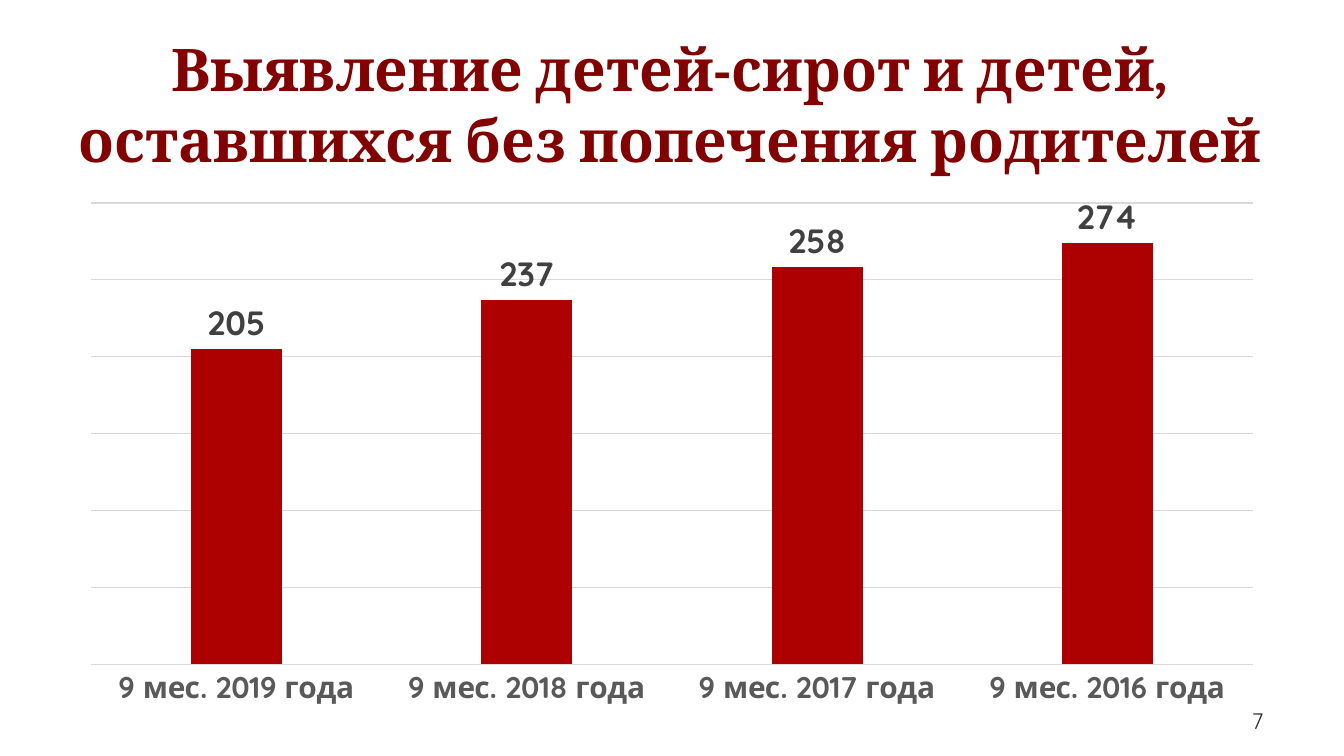
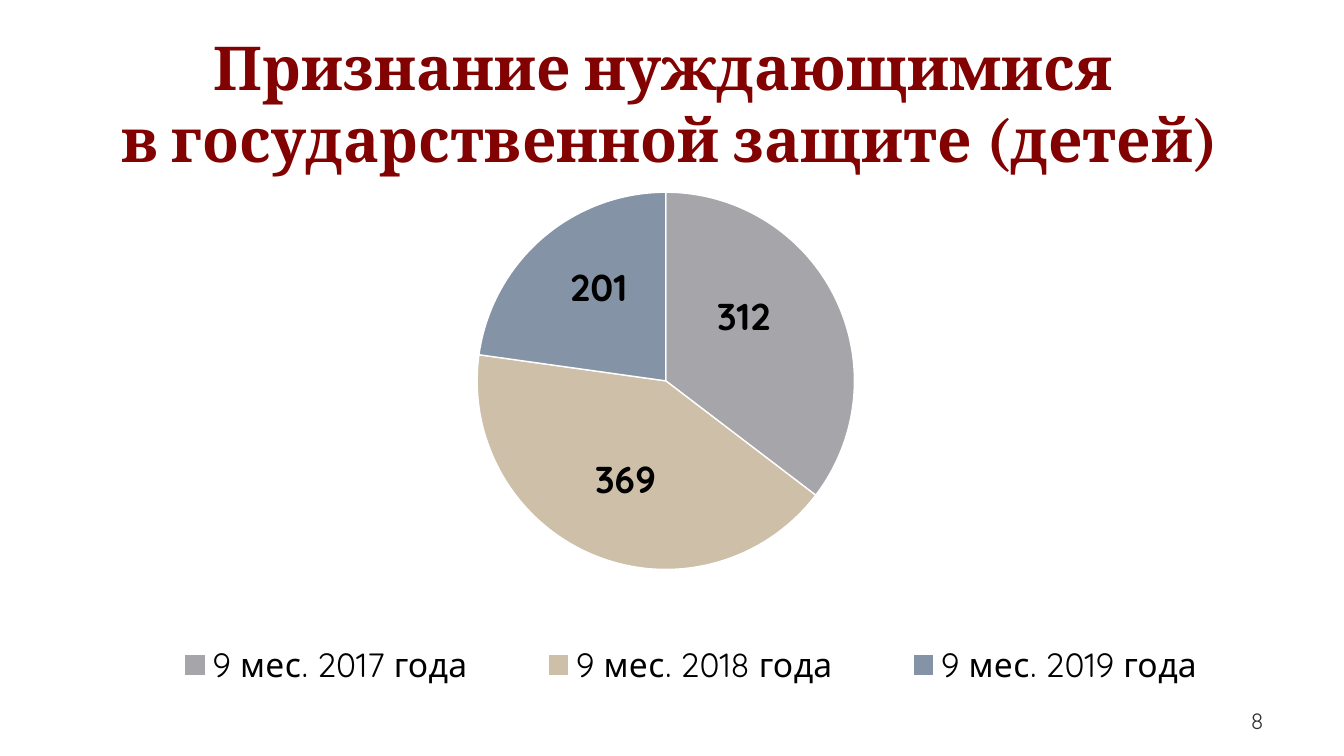
from dataclasses import dataclass

from lxml.etree import SubElement
from pptx import Presentation
from pptx.chart.chart import Chart
from pptx.chart.data import CategoryChartData
from pptx.dml.color import RGBColor
from pptx.enum.chart import (XL_CHART_TYPE, XL_LABEL_POSITION,
                             XL_LEGEND_POSITION, XL_TICK_LABEL_POSITION,
                             XL_TICK_MARK)
from pptx.enum.shapes import MSO_SHAPE
from pptx.enum.text import MSO_ANCHOR, MSO_AUTO_SIZE, PP_ALIGN
from pptx.oxml.ns import qn
from pptx.oxml.xmlchemy import BaseOxmlElement
from pptx.slide import Slide
from pptx.text.text import Font, TextFrame
from pptx.util import Inches, Pt

WIDTH, HEIGHT = Inches(10), Inches(5.625)
COL, ROW = WIDTH / 100, HEIGHT / 100
HEAD, BODY = "Cambria", "Quicksand"
COLORS = {
    "title": "820101", "bar": "AD0101", "grid": "D9D9D9", "axis": "595959",
    "label": "404040", "number": "303030", "black": "000000",
    "white": "FFFFFF", "gray": "A5A5AA", "sand": "CDBFA8", "steel": "8494A6",
}


@dataclass(frozen=True)
class Box:
    """An area in hundredths of the slide, or of a chart."""
    col: float
    row: float
    wide: float
    high: float

    def place(self) -> tuple[int, int, int, int]:
        return (round(self.col * COL), round(self.row * ROW),
                round(self.wide * COL), round(self.high * ROW))


@dataclass(frozen=True)
class Band:
    box: Box
    alpha: int = 100


@dataclass(frozen=True)
class Page:
    number: int
    lines: tuple[str, ...]
    size: float


@dataclass(frozen=True)
class Graph:
    kind: XL_CHART_TYPE
    area: Box
    plot: Box
    years: tuple[int, ...]
    values: tuple[int, ...]
    size: float


@dataclass(frozen=True)
class Slice:
    fill: str
    right: float  # label shift in hundredths of the chart
    down: float


BANDS = (Band(Box(3, 4.1, 94, 19.4), 83), Band(Box(4.1, 5.5, 91.7, 16.4)))
TITLE = Box(4.7, 6.05, 90.3, 15.1)
NUMBER = Box(71.7, 92.6, 23.3, 5.3)
LEGEND = Box(6, 89, 90, 9.4)
SLICES = (Slice("gray", -0.5, -4), Slice("sand", -0.3, 2.2),
          Slice("steel", -0.4, -4))
FOUND = Page(7, ("Выявление детей-сирот и детей, оставшихся без попечения родителей",), 31.5)
NEED = Page(8, ("Признание нуждающимися ", "в государственной защите (детей)"), 32.4)
BARS = Graph(XL_CHART_TYPE.COLUMN_CLUSTERED, Box(5, 25.6, 90, 69.2),
             Box(2, 1.8, 96, 88.2), (2019, 2018, 2017, 2016),
             (205, 237, 258, 274), 10)
PIE = Graph(XL_CHART_TYPE.PIE, Box(2.8, 19.2, 95.3, 73.4),
            Box(34.3, 8.5, 29.5, 68), (2017, 2018, 2019),
            (312, 369, 201), 18)


def color(name: str) -> RGBColor:
    return RGBColor.from_string(COLORS[name])


def style(font: Font, size: float, ink: str, face: str = BODY, bold: bool = False) -> None:
    font.name, font.size, font.bold = face, Pt(size), bold
    font.color.rgb = color(ink)


def write(frame: TextFrame, lines: tuple[str, ...], *, size: float, ink: str,
          face: str = BODY, bold: bool = False,
          align: PP_ALIGN = PP_ALIGN.CENTER, pitch: float | None = None) -> None:
    frame.word_wrap = True
    frame.auto_size = MSO_AUTO_SIZE.NONE
    frame.vertical_anchor = MSO_ANCHOR.MIDDLE
    para = frame.paragraphs[0]
    para.alignment = align
    if pitch:
        para.line_spacing = Pt(pitch)
    for i, line in enumerate(lines):
        if i:
            para.add_line_break()
        run = para.add_run()
        run.text = line
        style(run.font, size, ink, face, bold)


def lay(slide: Slide, band: Band) -> None:
    """Put a white band behind the title."""
    shape = slide.shapes.add_shape(MSO_SHAPE.RECTANGLE, *band.box.place())
    shape.shadow.inherit = False
    shape.fill.solid()
    shape.fill.fore_color.rgb = color("white")
    shape.line.fill.background()
    if band.alpha < 100:
        tint = shape._element.spPr.find(qn("a:solidFill"))[0]
        SubElement(tint, qn("a:alpha")).set("val", str(band.alpha * 1000))
    slide.shapes.title._element.addprevious(shape._element)


def start(deck: Presentation, page: Page) -> Slide:
    """Add a slide with its bands, title and number."""
    slide = deck.slides.add_slide(deck.slide_layouts[5])
    for band in BANDS:
        lay(slide, band)
    title = slide.shapes.title
    title.left, title.top, title.width, title.height = TITLE.place()
    frame = title.text_frame
    frame.margin_left = frame.margin_right = Inches(0.05)
    write(frame, page.lines, size=page.size, ink="title", face=HEAD,
          bold=True, pitch=38.3)
    box = slide.shapes.add_textbox(*NUMBER.place())
    write(box.text_frame, (str(page.number),), size=12, ink="number",
          align=PP_ALIGN.RIGHT)
    return slide


def pin(layout: BaseOxmlElement, **parts: str | float) -> None:
    """Fill a chart layout with manual settings; numbers are hundredths."""
    for old in list(layout):
        layout.remove(old)
    manual = SubElement(layout, qn("c:manualLayout"))
    for tag, val in parts.items():
        text = val if isinstance(val, str) else f"{val / 100:.3f}"
        SubElement(manual, qn(f"c:{tag}")).set("val", text)


def slot(parent: BaseOxmlElement, spot: int) -> BaseOxmlElement:
    """Find the parent's layout element, or add one at the given spot."""
    layout = parent.find(qn("c:layout"))
    if layout is None:
        layout = SubElement(parent, qn("c:layout"))
        parent.insert(spot, layout)
    return layout


def draw(slide: Slide, graph: Graph) -> Chart:
    data = CategoryChartData()
    data.categories = [f"9 мес. {year} года" for year in graph.years]
    data.add_series("Series 1", graph.values)
    chart = slide.shapes.add_chart(graph.kind, *graph.area.place(), data).chart
    chart.has_title = chart.has_legend = False
    style(chart.font, graph.size, "black")
    plot = graph.plot
    pin(slot(chart.plots[0]._element.getparent(), 0), layoutTarget="inner",
        xMode="edge", yMode="edge", x=plot.col, y=plot.row, w=plot.wide, h=plot.high)
    return chart


def label(chart: Chart, size: float, ink: str, spot: XL_LABEL_POSITION) -> None:
    labels = chart.plots[0].series[0].data_labels
    labels.show_value = True
    labels.position = spot
    style(labels.font, size, ink, bold=True)


def dress(chart: Chart) -> None:
    """Format the column chart."""
    plot = chart.plots[0]
    plot.gap_width, plot.overlap, plot.vary_by_categories = 219, -27, False
    fill = plot.series[0].format.fill
    fill.solid()
    fill.fore_color.rgb = color("bar")
    label(chart, 18, "label", XL_LABEL_POSITION.OUTSIDE_END)
    cat, val = chart.category_axis, chart.value_axis
    cat.major_tick_mark = cat.minor_tick_mark = XL_TICK_MARK.NONE
    cat.tick_label_position = XL_TICK_LABEL_POSITION.NEXT_TO_AXIS
    style(cat.tick_labels.font, 16, "axis", bold=True)
    val.visible = False
    val.minimum_scale, val.maximum_scale, val.major_unit = 0, 300, 50
    val.has_major_gridlines = True
    for line in (cat.format.line, val.major_gridlines.format.line):
        line.color.rgb = color("grid")
        line.width = Pt(0.75)


def slice_up(chart: Chart) -> None:
    """Format the pie chart."""
    plot = chart.plots[0]
    plot.vary_by_categories = True
    label(chart, 20, "black", XL_LABEL_POSITION.CENTER)
    series = plot.series[0]
    for i, part in enumerate(SLICES):
        point = series.points[i]
        point.format.fill.solid()
        point.format.fill.fore_color.rgb = color(part.fill)
        point.format.line.color.rgb = color("white")
        point.format.line.width = Pt(0.75)
        point.data_label.position = XL_LABEL_POSITION.CENTER
        style(point.data_label.font, 20, "black", bold=True)
        tag = series.data_labels._element.findall(qn("c:dLbl"))[i]
        pin(slot(tag, 1), x=part.right, y=part.down)
    chart.has_legend = True
    legend = chart.legend
    legend.position = XL_LEGEND_POSITION.BOTTOM
    legend.include_in_layout = False
    style(legend.font, 18, "black")
    pin(slot(legend._element, 1), xMode="edge", yMode="edge", x=LEGEND.col,
        y=LEGEND.row, w=LEGEND.wide, h=LEGEND.high)


def main() -> None:
    deck = Presentation()
    deck.slide_width, deck.slide_height = WIDTH, HEIGHT
    for page, graph, finish in ((FOUND, BARS, dress), (NEED, PIE, slice_up)):
        finish(draw(start(deck, page), graph))
    deck.save("out.pptx")


if __name__ == "__main__":
    main()
